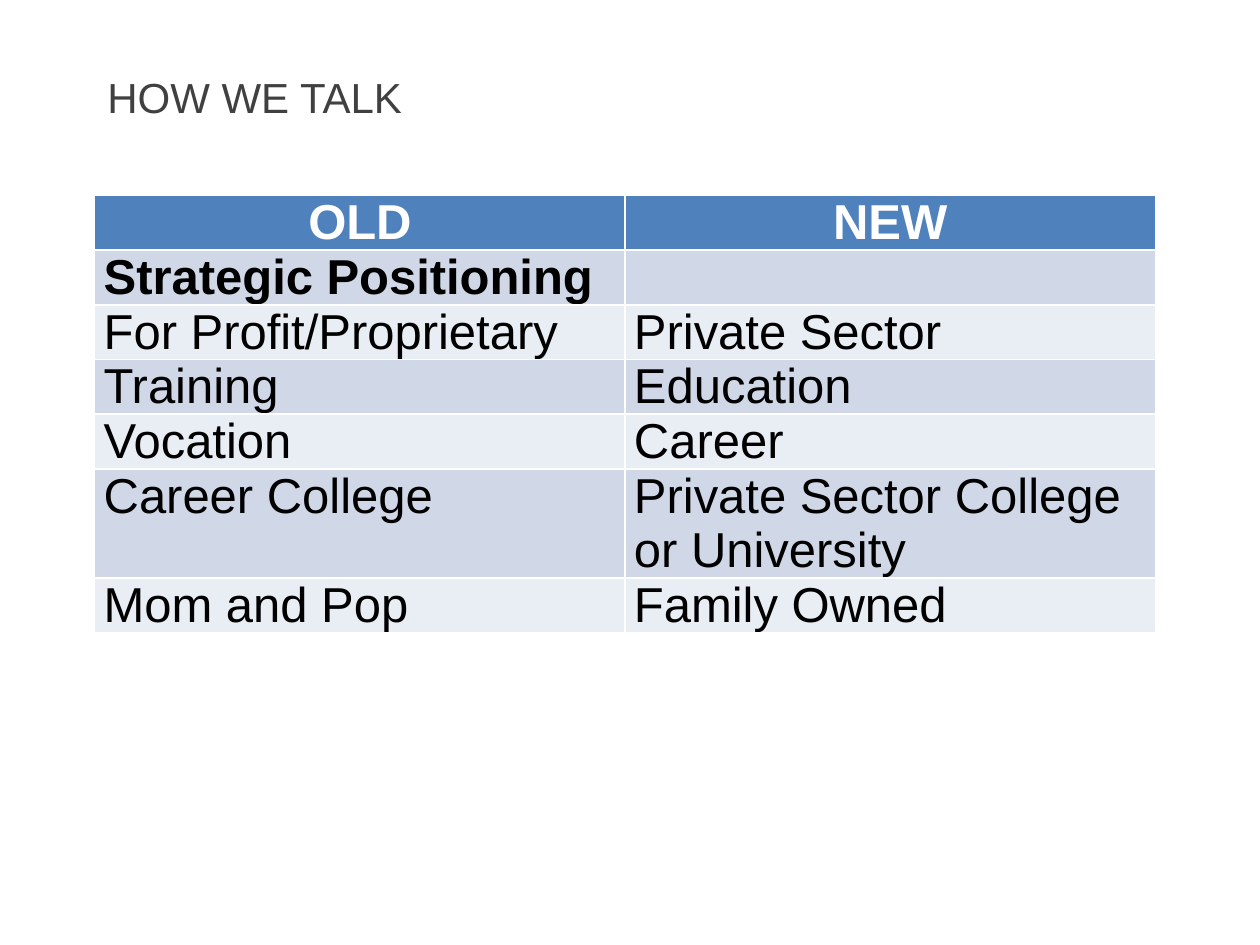
from pptx import Presentation
from pptx.dml.color import RGBColor
from pptx.enum.text import MSO_ANCHOR, PP_ALIGN
from pptx.util import Cm, Pt

TITLE = "HOW WE TALK"
ROWS = [
    ("OLD", "NEW"),
    ("Strategic Positioning", ""),
    ("For Profit/Proprietary", "Private Sector"),
    ("Training", "Education"),
    ("Vocation", "Career"),
    ("Career College", "Private Sector College or University"),
    ("Mom and Pop", "Family Owned"),
]
BOLD_ROWS = (0, 1)  # column heads and section head
COLORS = {
    "title": "404040",
    "header": "4F81BD",
    "header_text": "FFFFFF",
    "odd_row": "D0D8E8",
    "even_row": "E9EDF4",
    "body_text": "000000",
}
FONT = "Arial"
LEFT = Cm(1.91)
COLUMN_WIDTH = Cm(10.69)
ROW_HEIGHT = Cm(0.86)


def style_paragraph(paragraph, size, color, bold, alignment):
    paragraph.alignment = alignment
    font = paragraph.font
    font.name, font.size, font.bold = FONT, Pt(size), bold
    font.color.rgb = RGBColor.from_string(COLORS[color])


def add_title(slide):
    title = slide.shapes.title
    title.left, title.top = LEFT, Cm(0.84)
    title.width, title.height = Cm(18.21), Cm(2.21)
    title.text_frame.text = TITLE
    title.text_frame.vertical_anchor = MSO_ANCHOR.MIDDLE
    style_paragraph(title.text_frame.paragraphs[0], 24, "title", False, PP_ALIGN.LEFT)


def fill_cell(cell, text, row_index):
    is_header = row_index == 0
    fill = "header" if is_header else "odd_row" if row_index % 2 else "even_row"
    cell.fill.solid()
    cell.fill.fore_color.rgb = RGBColor.from_string(COLORS[fill])
    cell.margin_left = cell.margin_right = Cm(0.18)
    cell.margin_top = cell.margin_bottom = Cm(0)
    cell.text = text
    style_paragraph(
        cell.text_frame.paragraphs[0],
        28,
        "header_text" if is_header else "body_text",
        row_index in BOLD_ROWS,
        PP_ALIGN.CENTER if is_header else PP_ALIGN.LEFT,
    )


def add_terms_table(slide):
    row_count, column_count = len(ROWS), len(ROWS[0])
    table = slide.shapes.add_table(
        row_count, column_count, LEFT, Cm(3.94),
        COLUMN_WIDTH * column_count, ROW_HEIGHT * row_count,
    ).table
    for row_index, texts in enumerate(ROWS):
        for column_index, text in enumerate(texts):
            fill_cell(table.cell(row_index, column_index), text, row_index)


def main():
    presentation = Presentation()
    presentation.slide_width, presentation.slide_height = Cm(25.4), Cm(19.05)
    slide = presentation.slides.add_slide(presentation.slide_layouts[5])
    add_title(slide)
    add_terms_table(slide)
    presentation.save("out.pptx")


if __name__ == "__main__":
    main()
